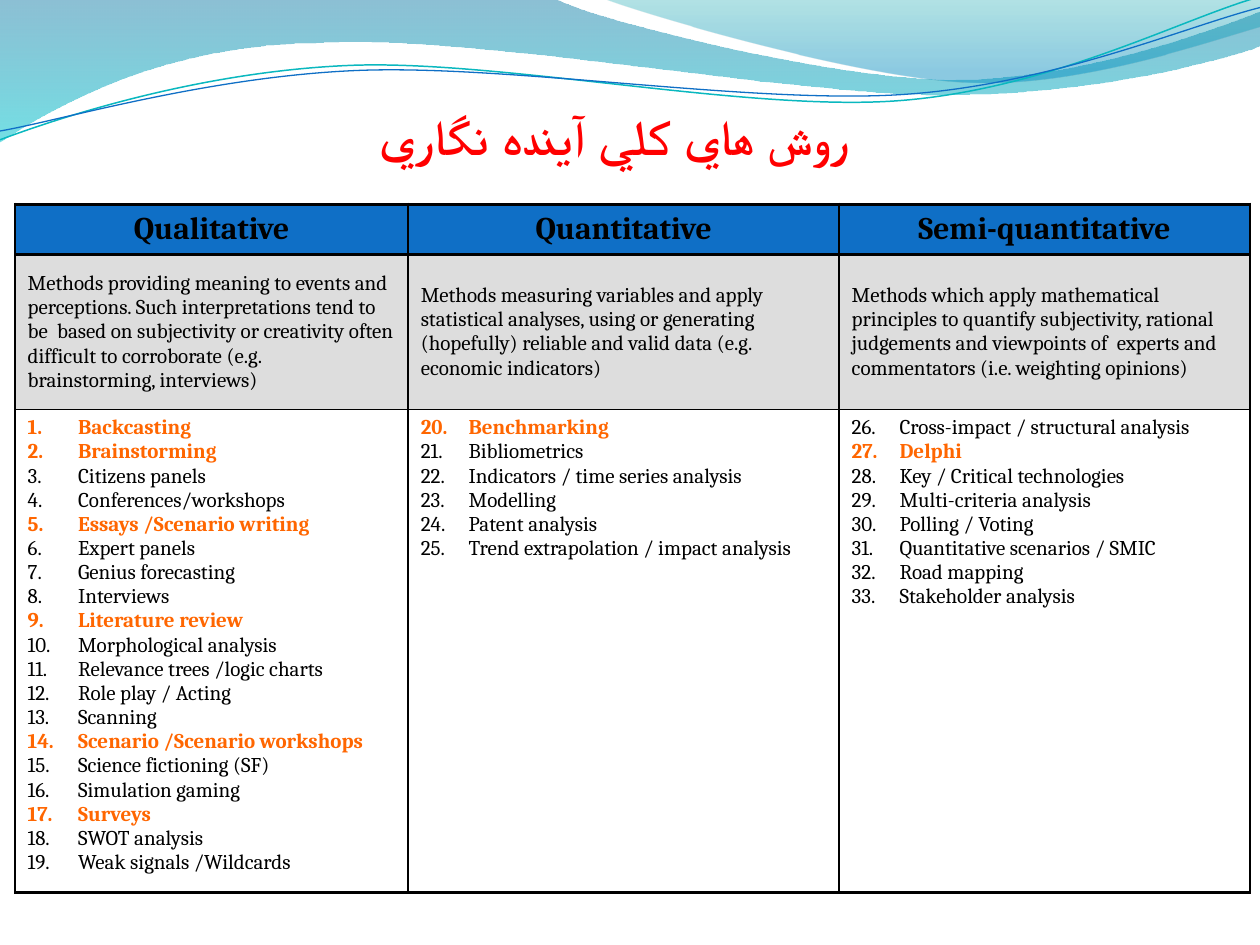
from lxml import etree
from pptx import Presentation
from pptx.dml.color import RGBColor
from pptx.enum.text import MSO_ANCHOR, PP_ALIGN
from pptx.oxml.ns import qn
from pptx.util import Inches, Pt

CENTER, LEFT = PP_ALIGN.CENTER, PP_ALIGN.LEFT
TOP, MIDDLE, BOTTOM = MSO_ANCHOR.TOP, MSO_ANCHOR.MIDDLE, MSO_ANCHOR.BOTTOM

COLORS = {
    "title": "FF0000", "header": "0F6FC6", "definition": "DDDDDD",
    "text": "000000", "highlight": "FF6600",
    "wave_blue": "0074A1", "wave_cyan": "00C6CF",
    "crest_teal": "00A1A9", "crest_blue": "008BBF",
    "line_teal": "0AB8BF", "line_blue": "0F6FC6",
}

WAVES = [
    ([(0, -0.01), [(4.4, -0.01)],
      [(4.76, 0.17), (6.64, 0.63), (7.58, 0.63)],
      [(8.53, 0.63), (9.58, 0.26), (10, 0.09)],
      [(10.01, 0.36)],
      [(9.83, 0.44), (8.7, 0.76), (7.46, 0.75)],
      [(6.22, 0.75), (3.82, 0.28), (2.57, 0.34)],
      [(1.29, 0.35), (0.46, 0.83), (-0.01, 1.13)]],
     [(0, "wave_blue", 45), (1, "wave_cyan", 55)]),
    ([(4.79, -0.01),
      [(5.09, 0.11), (6.82, 0.62), (7.69, 0.65)],
      [(8.56, 0.69), (9.61, 0.32), (10, 0.21)],
      [(10, 0)]],
     [(0, "crest_teal", 30), (0.8, "crest_blue", 45)]),
]

WAVE_LINES = [
    ([(0, 1.11), [(0.48, 0.93), (1.58, 0.57), (2.77, 0.52)],
      [(3.95, 0.47), (5.93, 0.89), (7.13, 0.8)],
      [(8.33, 0.71), (9.38, 0.15), (9.98, -0.02)]], "line_teal", 0.85),
    ([(0, 1.04), [(0.47, 0.96), (1.64, 0.61), (2.83, 0.56)],
      [(4.03, 0.51), (5.97, 0.83), (7.17, 0.75)],
      [(8.36, 0.67), (9.41, 0.21), (10, 0.06)]], "line_blue", 0.75),
]

COLUMNS = [
    ("Qualitative", 3.12, 0.4, 1,
     "Methods providing meaning to events and perceptions. Such interpretations "
     "tend to be  based on subjectivity or creativity often difficult to "
     "corroborate (e.g.  brainstorming, interviews)",
     ["Backcasting", "Brainstorming", "Citizens panels", "Conferences/workshops",
      "Essays /Scenario writing", "Expert panels", "Genius forecasting",
      "Interviews", "Literature review", "Morphological analysis",
      "Relevance trees /logic charts", "Role play / Acting", "Scanning",
      "Scenario /Scenario workshops", "Science fictioning (SF)",
      "Simulation gaming", "Surveys", "SWOT analysis", "Weak signals /Wildcards"]),
    ("Quantitative", 3.42, 0.38, 20,
     "Methods measuring variables and apply statistical analyses, using or "
     "generating (hopefully) reliable and valid data (e.g. economic indicators)",
     ["Benchmarking", "Bibliometrics", "Indicators / time series analysis",
      "Modelling", "Patent analysis", "Trend extrapolation / impact analysis"]),
    ("Semi-quantitative", 3.26, 0.38, 26,
     "Methods which apply mathematical principles to quantify subjectivity, "
     "rational judgements and viewpoints of  experts and commentators "
     "(i.e. weighting opinions)",
     ["Cross-impact / structural analysis", "Delphi",
      "Key / Critical technologies", "Multi-criteria analysis",
      "Polling / Voting", "Quantitative scenarios / SMIC", "Road mapping",
      "Stakeholder analysis"]),
]
HIGHLIGHTED = {1, 2, 5, 9, 14, 17, 20, 27}

ROWS = [
    (0.4, "header", MIDDLE, CENTER, 18, 2, 2),
    (1.23, "definition", MIDDLE, LEFT, 12, 2, 1),
    (3.83, None, TOP, LEFT, 12, 1, 2),
]


def add_curve(slide, outline, close):
    start, *segments = outline
    builder = slide.shapes.build_freeform(Inches(start[0]), Inches(start[1]))
    builder.add_line_segments(
        [(Inches(x), Inches(y)) for segment in segments for x, y in segment], close=close)
    shape = builder.convert_to_shape()
    shape.shadow.inherit = False
    vertices = iter(list(shape.element.iter(qn("a:lnTo"))))
    for segment in segments:
        corners = [next(vertices) for _ in segment]
        if len(corners) == 3:
            curve = etree.Element(qn("a:cubicBezTo"))
            corners[0].addprevious(curve)
            for corner in corners:
                curve.append(corner[0])
                corner.getparent().remove(corner)
    return shape


def style_paragraph(paragraph, font_name, size, color, bold, alignment):
    paragraph.alignment = alignment
    paragraph.font.name = font_name
    paragraph.font.size = Pt(size)
    paragraph.font.bold = bold
    paragraph.font.color.rgb = RGBColor.from_string(COLORS[color])


presentation = Presentation()
presentation.slide_width = Inches(10)
presentation.slide_height = Inches(7.5)
slide = presentation.slides.add_slide(presentation.slide_layouts[5])

for outline, stops in WAVES:
    wave = add_curve(slide, outline, True)
    wave.line.fill.background()
    wave.fill.gradient()
    wave.fill.gradient_angle = 270
    for stop, (position, color, opacity) in zip(wave.fill.gradient_stops, stops):
        stop.position = position
        stop.color.rgb = RGBColor.from_string(COLORS[color])
    for element, (position, color, opacity) in zip(wave.element.iter(qn("a:srgbClr")), stops):
        etree.SubElement(element, qn("a:alpha"), val=str(opacity * 1000))

for outline, color, width in WAVE_LINES:
    wave_line = add_curve(slide, outline, False)
    wave_line.fill.background()
    wave_line.line.color.rgb = RGBColor.from_string(COLORS[color])
    wave_line.line.width = Pt(width)

title = slide.shapes.title
slide.shapes.element.append(title.element)
title.left, title.top = Inches(0.51), Inches(0.44)
title.width, title.height = Inches(8.73), Inches(0.87)
frame = title.text_frame
frame.text = "روش هاي كلي آينده نگاري"
frame.vertical_anchor = BOTTOM
frame.margin_left = frame.margin_right = frame.margin_bottom = 0
frame.margin_top = Inches(0.05)
paragraph = frame.paragraphs[0]
style_paragraph(paragraph, "Lato", 28, "title", True, CENTER)
paragraph._p.get_or_add_pPr().set("rtl", "1")

table = slide.shapes.add_table(len(ROWS), len(COLUMNS), Inches(0.12), Inches(1.62),
                               Inches(9.8), Inches(5.46)).table
table.first_row = table.horz_banding = False
for column, (heading, width, indent, start, definition, methods) in enumerate(COLUMNS):
    table.columns[column].width = Inches(width)
    texts = [heading, definition, "\n".join(methods)]
    for row, (height, fill, anchor, alignment, size, above, below) in enumerate(ROWS):
        table.rows[row].height = Inches(height)
        cell = table.cell(row, column)
        cell.text = texts[row]
        cell.vertical_anchor = anchor
        cell_properties = cell._tc.get_or_add_tcPr()
        for side, weight in (("L", 1), ("R", 1), ("T", above), ("B", below)):
            border = etree.SubElement(cell_properties, qn(f"a:ln{side}"), w=str(Pt(weight)))
            solid = etree.SubElement(border, qn("a:solidFill"))
            etree.SubElement(solid, qn("a:srgbClr"), val=COLORS["text"])
        if fill:
            cell.fill.solid()
            cell.fill.fore_color.rgb = RGBColor.from_string(COLORS[fill])
        else:
            cell.fill.background()
        for number, paragraph in enumerate(cell.text_frame.paragraphs, start):
            listed = row == 2
            marked = listed and number in HIGHLIGHTED
            color = "highlight" if marked else "text"
            if listed:
                properties = paragraph._p.get_or_add_pPr()
                properties.set("marL", str(Inches(indent)))
                properties.set("indent", str(-Inches(indent)))
                bullet_color = etree.SubElement(properties, qn("a:buClr"))
                etree.SubElement(bullet_color, qn("a:srgbClr"), val=COLORS[color])
                etree.SubElement(properties, qn("a:buAutoNum"),
                                 type="arabicPeriod", startAt=str(start))
            style_paragraph(paragraph, "Cambria", size, color, marked or row == 0, alignment)

presentation.save("out.pptx")
